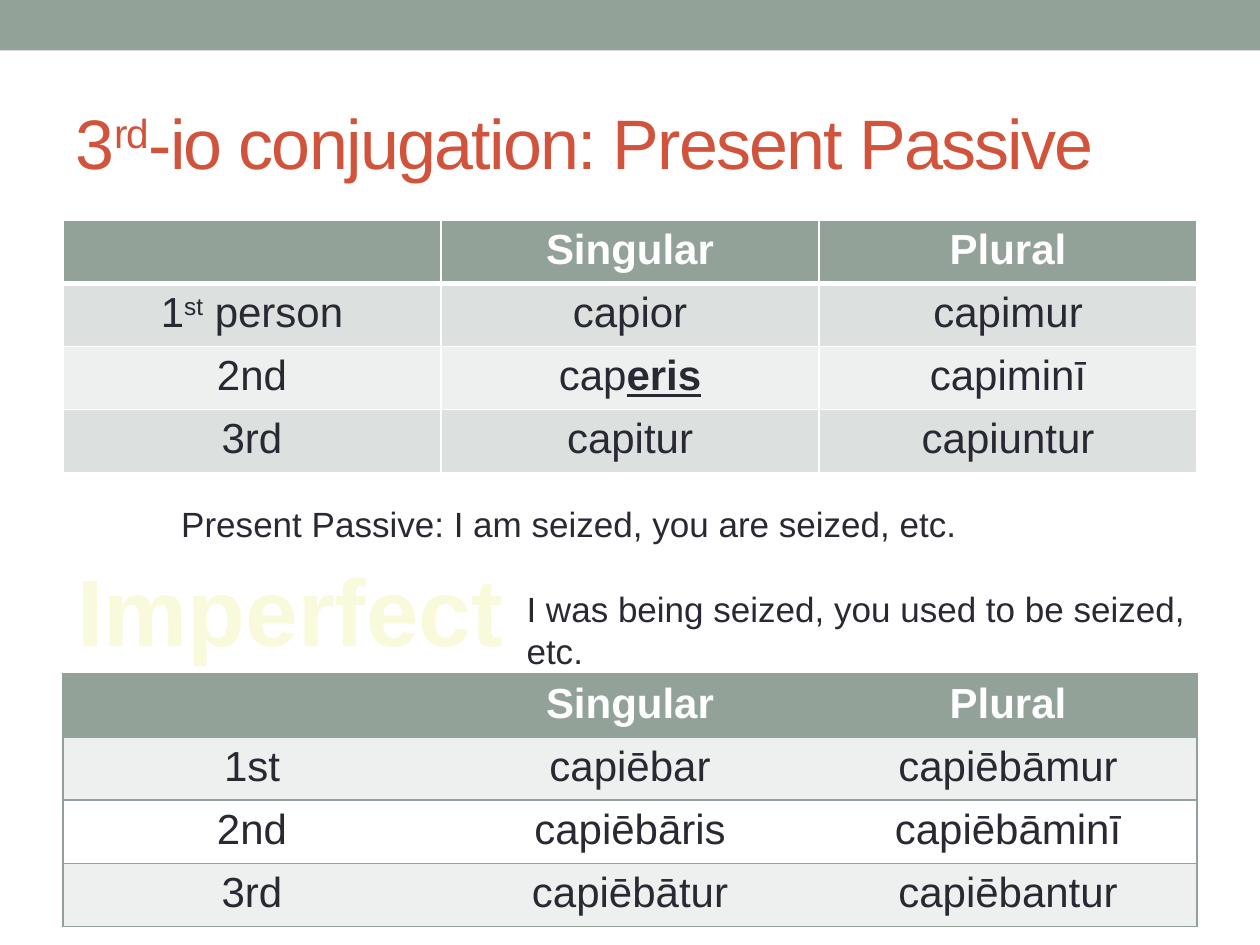
from lxml import etree
from pptx import Presentation
from pptx.dml.color import RGBColor
from pptx.enum.shapes import MSO_SHAPE
from pptx.enum.text import MSO_ANCHOR, PP_ALIGN
from pptx.oxml.ns import qn
from pptx.util import Pt

RECT = MSO_SHAPE.RECTANGLE
MIDDLE = MSO_ANCHOR.MIDDLE
LEFT, CENTER = PP_ALIGN.LEFT, PP_ALIGN.CENTER
SAGE, WHITE, INK, RUST = "93A299", "FFFFFF", "292934", "D2533C"
GRAY, PALE, CREAM = "DCE0DE", "EEF0EF", "F9F9DC"
SUPER = {"baseline": "30000"}
STRESS = {"b": "1", "u": "sng"}


def rgb(value):
    return RGBColor.from_string(value)


def add_text(tf, text, size=24, color=INK, bold=False, align=LEFT, spacing=0):
    """Fill the first paragraph; text is a string or a list of (string, run attributes)."""
    p = tf.paragraphs[0]
    p.alignment = align
    for part, attributes in [(text, {})] if isinstance(text, str) else text:
        r = p.add_run()
        r.text = part
        r.font.name, r.font.size, r.font.bold = "Arial", Pt(size), bold
        r.font.color.rgb = rgb(color)
        rPr = r._r.get_or_add_rPr()
        if spacing:
            rPr.set("spc", str(spacing * 100))
        for key, value in attributes.items():
            rPr.set(key, value)


prs = Presentation()
prs.slide_width, prs.slide_height = Pt(720), Pt(540)
s = prs.slides.add_slide(prs.slide_layouts[6])

band = s.shapes.add_shape(RECT, 0, 0, Pt(720), Pt(28.8))
band.shadow.inherit = False
band.fill.solid()
band.fill.fore_color.rgb = rgb(SAGE)
band.line.fill.background()

title = [("3", {}), ("rd", SUPER), ("-io conjugation: Present Passive", {})]
texts = [
    (36, 41.8, 648, 77.8, title, {"size": 40, "color": RUST, "spacing": -1}),
    (96.5, 283.7, 573.8, 31.7, "Present Passive: I am seized, you are seized, etc.", {"size": 20}),
    (293.8, 331.9, 426.2, 55.4, "I was being seized, you used to be seized, etc.", {"size": 20}),
    (30, 312, 272, 70, "Imperfect",
     {"size": 54, "color": CREAM, "bold": True, "align": CENTER}),
]
for x, y, w, h, text, fmt in texts:
    tf = s.shapes.add_textbox(Pt(x), Pt(y), Pt(w), Pt(h)).text_frame
    tf.word_wrap = True
    if text is title:
        tf.vertical_anchor = MIDDLE
    add_text(tf, text, **fmt)

present = [
    ["", "Singular", "Plural"],
    [[("1", {}), ("st", SUPER), (" person", {})], "capior", "capimur"],
    ["2nd", [("cap", {}), ("eris", STRESS)], "capiminī"],
    ["3rd", "capitur", "capiuntur"],
]
imperfect = [
    ["", "Singular", "Plural"],
    ["1st", "capiēbar", "capiēbāmur"],
    ["2nd", "capiēbāris", "capiēbāminī"],
    ["3rd", "capiēbātur", "capiēbantur"],
]
# top, rows, border colour, inner vertical lines, odd and even row fills, rule under header
tables = [
    (126, present, WHITE, True, GRAY, PALE, 3),
    (385.2, imperfect, SAGE, False, PALE, WHITE, 1),
]
for top, rows, border, inner, odd, even, rule in tables:
    table = s.shapes.add_table(4, 3, Pt(36), Pt(top), Pt(648), Pt(136)).table
    for i, row in enumerate(rows):
        table.rows[i].height = Pt(34)
        for j, text in enumerate(row):
            cell = table.cell(i, j)
            tcPr = cell._tc.get_or_add_tcPr()
            widths = {
                "lnL": 1 if inner or j == 0 else 0,
                "lnR": 1 if inner or j == 2 else 0,
                "lnT": rule if i == 1 else 1,
                "lnB": rule if i == 0 else 1,
            }
            for side, width in widths.items():
                ln = etree.SubElement(tcPr, qn("a:" + side), w=str(Pt(width)))
                if width:
                    fill = etree.SubElement(ln, qn("a:solidFill"))
                    etree.SubElement(fill, qn("a:srgbClr"), val=border)
                else:
                    etree.SubElement(ln, qn("a:noFill"))
            cell.fill.solid()
            cell.fill.fore_color.rgb = rgb(SAGE if i == 0 else odd if i % 2 else even)
            if text:
                add_text(cell.text_frame, text, color=INK if i else WHITE,
                         bold=i == 0, align=CENTER)

prs.save("out.pptx")
